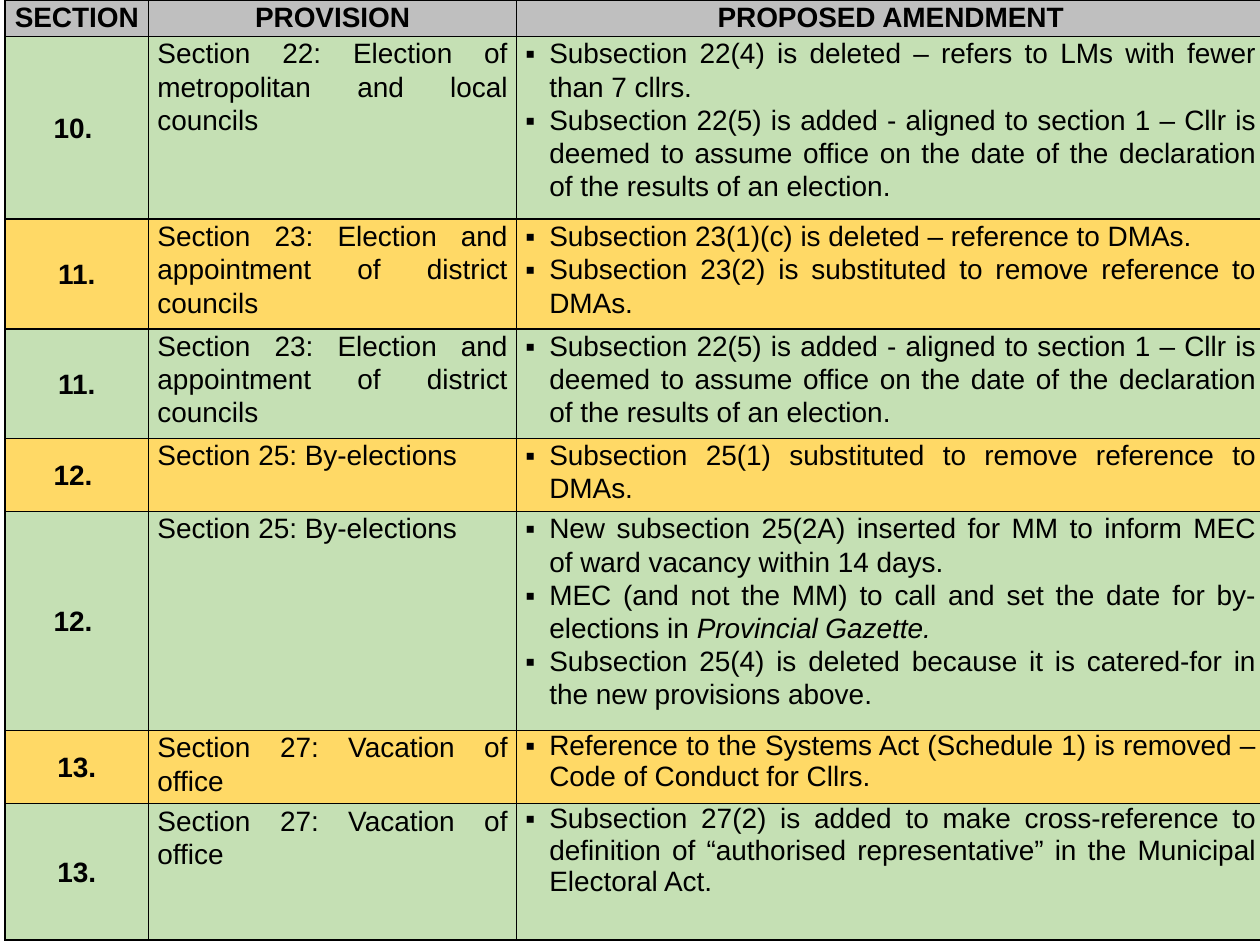
from dataclasses import dataclass

from lxml import etree
from pptx import Presentation
from pptx import util as u
from pptx.dml import color
from pptx.enum import text
from pptx.oxml import ns

Pt = u.Pt


@dataclass(frozen=True)
class Theme:
    font: str = "Arial"
    size: float = 16
    ink: str = "000000"
    head: str = "BFBFBF"
    green: str = "C5E0B4"
    gold: str = "FFD966"
    edge: float = 1
    lead: float = 1.07
    hang: float = 13.68


THEME = Theme()
MID = text.MSO_ANCHOR.MIDDLE
TOP = text.MSO_ANCHOR.TOP
CENTER = text.PP_ALIGN.CENTER
FULL = text.PP_ALIGN.JUSTIFY

COLS = (82.08, 210.24, 427.68)
HEADS = ("SECTION", "PROVISION", "PROPOSED AMENDMENT")
HEAD_TALL = 20.88

DISTRICT = "Section 23: Election and appointment of district councils"
BY_VOTE = "Section 25: By-elections"
VACANT = "Section 27: Vacation of office"
OFFICE = (
    "Subsection 22(5) is added - aligned to section 1 – Cllr is deemed to assume "
    "office on the date of the declaration of the results of an election."
)

ROWS = [
    (104.4, 1.07, "10. ", "Section 22: Election of metropolitan and local councils", [
        ("Subsection 22(4) is deleted – refers to LMs with fewer than 7 cllrs.",),
        (OFFICE,),
    ]),
    (62.64, 1.07, "11.", DISTRICT, [
        ("Subsection 23(1)(c) is deleted – reference to DMAs.",),
        ("Subsection 23(2) is substituted to remove reference to DMAs.",),
    ]),
    (62.64, 1.07, "11.", DISTRICT, [(OFFICE,)]),
    (41.76, 1.07, "12. ", BY_VOTE, [
        ("Subsection 25(1) substituted to remove reference to DMAs. ",),
    ]),
    (125.28, 1.07, "12. ", BY_VOTE, [
        ("New subsection 25(2A) inserted for MM to inform MEC of ward vacancy "
         "within 14 days.",),
        ("MEC (and not the MM) to call and set the date for by-elections in ",
         "Provincial Gazette. "),
        ("Subsection 25(4) is deleted because it is catered-for in the new "
         "provisions above. ",),
    ]),
    (41.76, 1, "13.", VACANT, [
        ("Reference to the Systems Act (Schedule 1) is removed – Code of Conduct "
         "for Cllrs.",),
    ]),
    (77.76, 1, "13.", VACANT, [
        ("Subsection 27(2) is added to make cross-reference to definition of "
         "“authorised representative” in the Municipal Electoral Act. ",),
    ]),
]


def apply(item, values):
    for name, value in values.items():
        setattr(item, name, value)


def add_node(parent, tag, **values):
    return etree.SubElement(parent, ns.qn(tag), values)


def add_edges(cell):
    props = cell._tc.get_or_add_tcPr()
    for side in ("a:lnL", "a:lnR", "a:lnT", "a:lnB"):
        line = add_node(props, side, w=str(Pt(THEME.edge)))
        add_node(add_node(line, "a:solidFill"), "a:srgbClr", val=THEME.ink)


def add_bullet(para):
    props = para._p.get_or_add_pPr()
    props.set("marL", str(Pt(THEME.hang)))
    props.set("indent", str(-Pt(THEME.hang)))
    add_node(props, "a:buFont", typeface=THEME.font)
    add_node(props, "a:buChar", char="▪")


def fill_cell(cell, paras, shade, align=FULL, bold=False, anchor=TOP,
              side=5.04, lead=THEME.lead, bullet=False):
    add_edges(cell)
    cell.fill.solid()
    cell.fill.fore_color.rgb = color.RGBColor.from_string(shade)
    apply(cell, {
        "margin_left": Pt(side), "margin_right": Pt(side),
        "margin_top": 0, "margin_bottom": 0, "vertical_anchor": anchor,
    })
    frame = cell.text_frame
    for index, parts in enumerate(paras):
        para = frame.add_paragraph() if index else frame.paragraphs[0]
        apply(para, {"alignment": align, "line_spacing": lead})
        if bullet:
            add_bullet(para)
        for place, words in enumerate(parts):
            run = para.add_run()
            run.text = words
            apply(run.font, {
                "name": THEME.font, "size": Pt(THEME.size),
                "bold": bold, "italic": place > 0,
            })
            run.font.color.rgb = color.RGBColor.from_string(THEME.ink)


def add_grid(slide, left, top, width, height):
    frame = slide.shapes.add_table(
        len(ROWS) + 1, len(COLS), Pt(left), Pt(top), Pt(width), Pt(height))
    table = frame.table
    apply(table, {"first_row": False, "horz_banding": False})
    for col, wide in zip(table.columns, COLS):
        col.width = Pt(wide * width / sum(COLS))
    talls = [HEAD_TALL] + [row[0] for row in ROWS]
    for row, tall in zip(table.rows, talls):
        row.height = Pt(tall * height / sum(talls))

    label = {"align": CENTER, "bold": True, "side": 4.32}
    for index, title in enumerate(HEADS):
        fill_cell(table.cell(0, index), [(title,)], THEME.head, **label)
    for index, (_, lead, number, topic, points) in enumerate(ROWS, 1):
        shade = THEME.green if index % 2 else THEME.gold
        fill_cell(table.cell(index, 0), [(number,)], shade, anchor=MID, **label)
        fill_cell(table.cell(index, 1), [(topic,)], shade)
        fill_cell(table.cell(index, 2), points, shade, lead=lead, bullet=True)


def main():
    deck = Presentation()
    apply(deck, {"slide_width": Pt(720), "slide_height": Pt(540)})
    slide = deck.slides.add_slide(deck.slide_layouts[6])
    add_grid(slide, 2.88, 0, 720, 537.12)
    deck.save("out.pptx")


if __name__ == "__main__":
    main()
